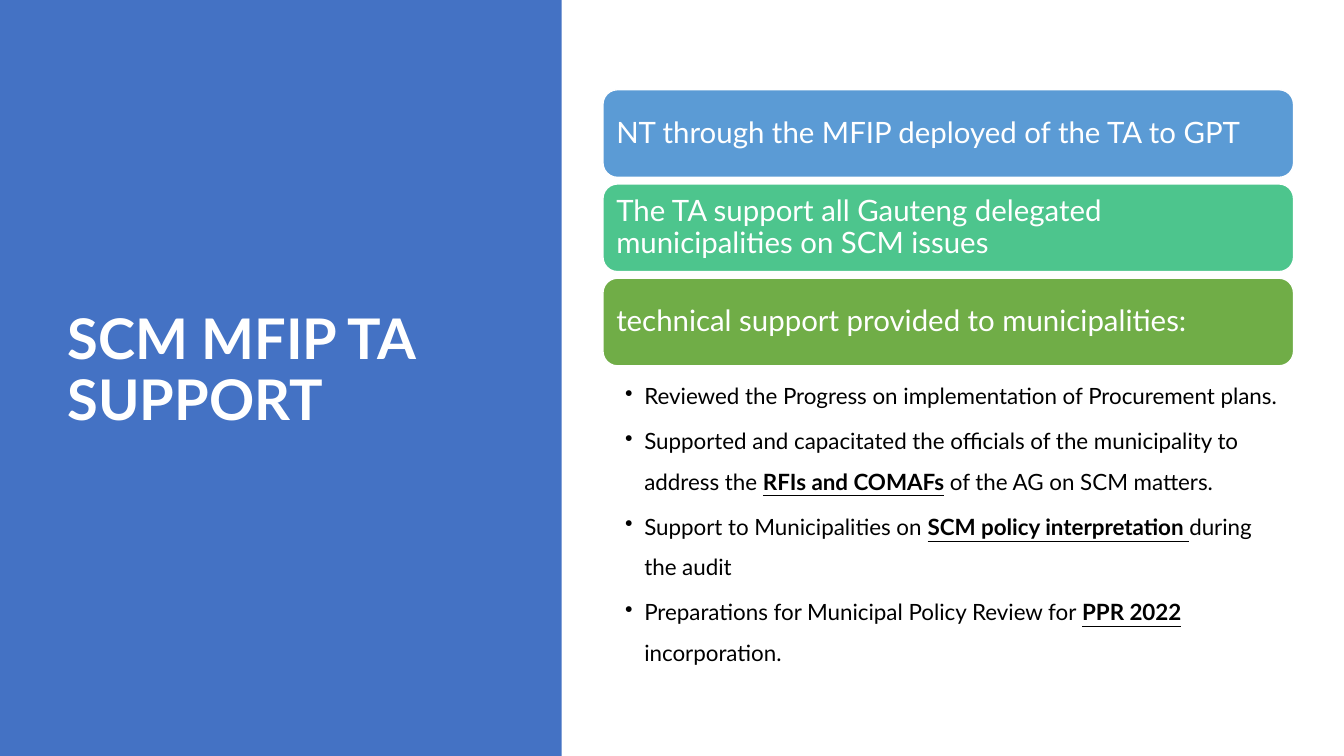
import pptx
import pptx.dml.color
import pptx.enum.shapes
import pptx.enum.text
import pptx.oxml
import pptx.oxml.ns
import pptx.util
from pptx.util import Inches

FONT = "Lato"
COLORS = {
    "panel": "4472C4",
    "blue": "5B9BD5",
    "teal": "4DC58D",
    "green": "70AD47",
    "white": "FFFFFF",
    "black": "000000",
}
BANNERS = [
    ("NT through the MFIP deployed of the TA to GPT", "blue"),
    ("The TA support all Gauteng delegated municipalities on SCM issues", "teal"),
    ("technical support provided to municipalities:", "green"),
]
# Each bullet is plain text, underlined text and the plain text after it.
BULLETS = [
    ("Reviewed the Progress on implementation of Procurement plans.",),
    ("Supported and capacitated the officials of the municipality to address the ",
     "RFIs and COMAFs", " of the AG on SCM matters."),
    ("Support to Municipalities on ", "SCM policy interpretation ", "during the audit"),
    ("Preparations for Municipal Policy Review for ", "PPR 2022 ", "incorporation."),
]
CONTENT_LEFT, CONTENT_WIDTH = 5.98, 6.85
BANNER_TOP, BANNER_HEIGHT, BANNER_PITCH = 0.89, 0.87, 0.935


def rgb(name):
    return pptx.dml.color.RGBColor.from_string(COLORS[name])


def style_font(font, size, color, bold=False):
    font.name = FONT
    font.size = pptx.util.Pt(size)
    font.bold = bold
    font.color.rgb = rgb(color)


def set_insets(tf, left, top, right, bottom):
    tf.margin_left, tf.margin_top = Inches(left), Inches(top)
    tf.margin_right, tf.margin_bottom = Inches(right), Inches(bottom)


def fill_text(tf, text, size, color, bold=False):
    """Put one left-aligned, vertically centred paragraph in the frame."""
    tf.text = text
    tf.word_wrap = True
    tf.auto_size = pptx.enum.text.MSO_AUTO_SIZE.NONE
    tf.vertical_anchor = pptx.enum.text.MSO_ANCHOR.MIDDLE
    p = tf.paragraphs[0]
    p.alignment = pptx.enum.text.PP_ALIGN.LEFT
    p.line_spacing = 0.9
    style_font(p.runs[0].font, size, color, bold)


def add_block(s, kind, left, top, width, height, color):
    sp = s.shapes.add_shape(kind, Inches(left), Inches(top), Inches(width), Inches(height))
    sp.shadow.inherit = False
    sp.fill.solid()
    sp.fill.fore_color.rgb = rgb(color)
    sp.line.fill.background()
    return sp


def add_side_panel(s):
    """Add the coloured panel behind the title."""
    sp = add_block(s, pptx.enum.shapes.MSO_SHAPE.RECTANGLE, 0, 0, 5.57, 7.5, "panel")
    s.shapes.title._element.addprevious(sp._element)


def set_title(s, text):
    sp = s.shapes.title
    sp.left, sp.top = Inches(0.57), Inches(0.68)
    sp.width, sp.height = Inches(4.16), Inches(6.02)
    fill_text(sp.text_frame, text, 40, "white", bold=True)


def add_banner(s, top, text, color):
    sp = add_block(s, pptx.enum.shapes.MSO_SHAPE.ROUNDED_RECTANGLE,
                   CONTENT_LEFT, top, CONTENT_WIDTH, BANNER_HEIGHT, color)
    sp.line.color.rgb = rgb("white")
    sp.line.width = pptx.util.Pt(1)
    set_insets(sp.text_frame, 0.09, 0.09, 0.09, 0.09)
    fill_text(sp.text_frame, text, 21, "white")


def add_bullet(p):
    pPr = p._p.get_or_add_pPr()
    pPr.set("marL", str(Inches(0.19)))
    pPr.set("indent", str(Inches(-0.19)))
    pPr.append(pptx.oxml.parse_xml(
        f'<a:buChar {pptx.oxml.ns.nsdecls("a")} char="•"/>'))


def add_bullets(s, bullets):
    sp = s.shapes.add_textbox(Inches(CONTENT_LEFT), Inches(3.63),
                              Inches(CONTENT_WIDTH), Inches(2.85))
    tf = sp.text_frame
    tf.word_wrap = True
    set_insets(tf, 0.22, 0.03, 0.16, 0.03)
    for i, parts in enumerate(bullets):
        p = tf.add_paragraph() if i else tf.paragraphs[0]
        add_bullet(p)
        p.line_spacing = 1.5
        p.space_after = pptx.util.Pt(3.5)
        for j, part in enumerate(parts):
            r = p.add_run()
            r.text = part
            emphasised = j == 1
            style_font(r.font, 16, "black", bold=emphasised)
            r.font.underline = emphasised


def main():
    prs = pptx.Presentation()
    prs.slide_width, prs.slide_height = Inches(13.33), Inches(7.5)
    s = prs.slides.add_slide(prs.slide_layouts.get_by_name("Title Only"))
    add_side_panel(s)
    set_title(s, "SCM MFIP TA SUPPORT")
    for i, (text, color) in enumerate(BANNERS):
        add_banner(s, BANNER_TOP + i * BANNER_PITCH, text, color)
    add_bullets(s, BULLETS)
    prs.save("out.pptx")


if __name__ == "__main__":
    main()
